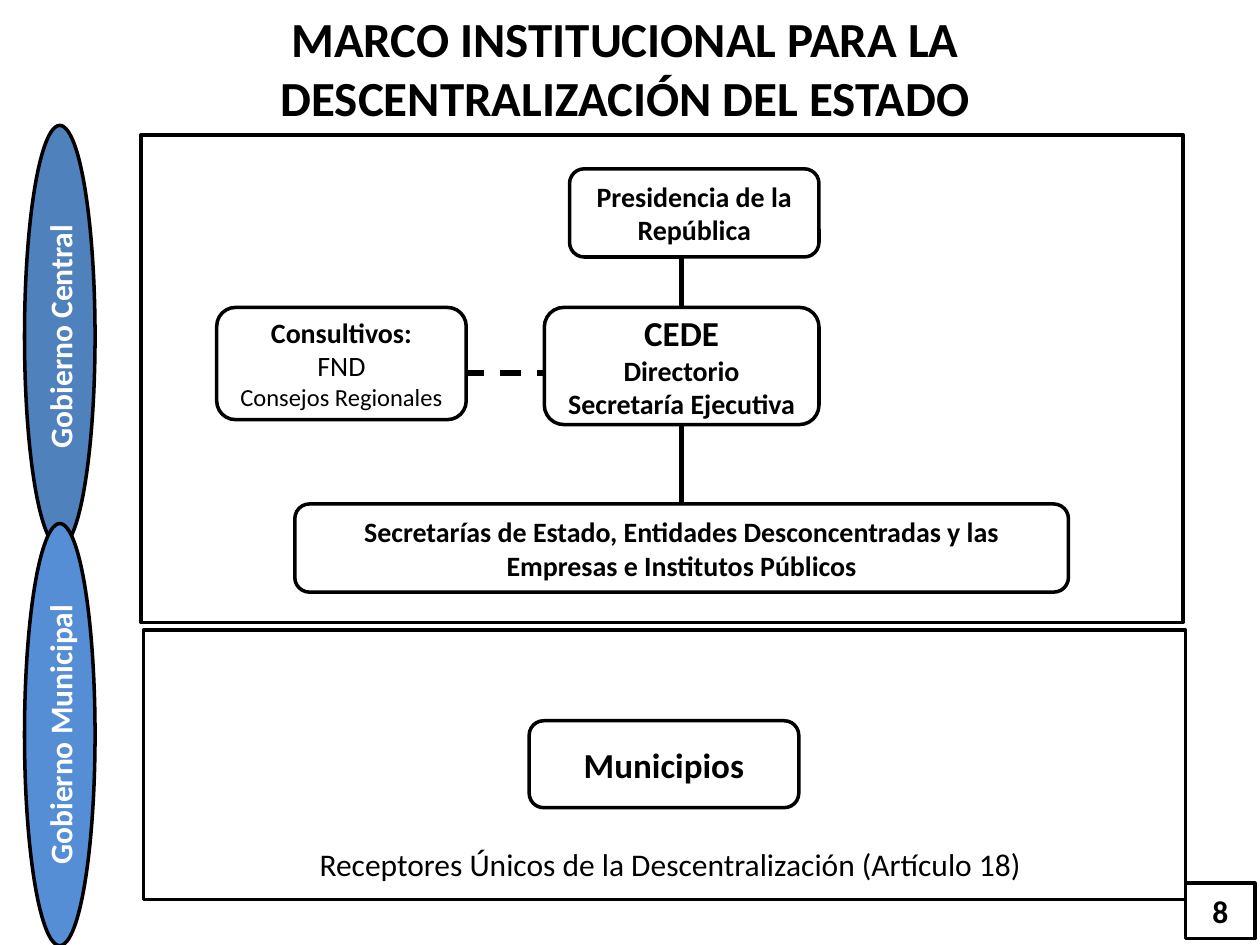
import dataclasses

import pptx
import pptx.dml.color
import pptx.enum.dml
import pptx.enum.shapes
import pptx.enum.text
import pptx.oxml.ns
import pptx.util
from lxml import etree

Inches = pptx.util.Inches
Pt = pptx.util.Pt
SHAPE = pptx.enum.shapes.MSO_SHAPE
ANCHOR = pptx.enum.text.MSO_ANCHOR


@dataclasses.dataclass(frozen=True)
class Theme:
    font: str = "Calibri"
    ink: str = "000000"
    paper: str = "FFFFFF"
    central: str = "4F81BD"
    municipal: str = "558ED5"
    title: int = 28
    heading: int = 20
    label: int = 18
    body: int = 16
    small: int = 14
    outline: int = 2
    link: int = 3


def rgb(value):
    return pptx.dml.color.RGBColor.from_string(value)


def write(para, text, *, size, color, font, bold=True):
    """Add one centred, formatted span of text to a paragraph."""
    para.alignment = pptx.enum.text.PP_ALIGN.CENTER
    span = para.add_run()
    span.text = text
    span.font.name = font
    span.font.size = Pt(size)
    span.font.bold = bold
    span.font.color.rgb = rgb(color)


class SlideBuilder:
    def __init__(self, page, theme):
        self.page = page
        self.theme = theme

    def fill_text(self, frame, lines, color, anchor=ANCHOR.MIDDLE):
        """Each line is (text, size) or (text, size, bold)."""
        frame.word_wrap = True
        frame.vertical_anchor = anchor
        for index, (text, size, *bold) in enumerate(lines):
            para = frame.add_paragraph() if index else frame.paragraphs[0]
            write(para, text, size=size, color=color, font=self.theme.font,
                  bold=bold[0] if bold else True)

    def box(self, place, lines=(), kind=SHAPE.ROUNDED_RECTANGLE, fill=None, color=None):
        box = self.page.shapes.add_shape(kind, *map(Inches, place))
        box.shadow.inherit = False
        box.fill.solid()
        box.fill.fore_color.rgb = rgb(fill or self.theme.paper)
        box.line.color.rgb = rgb(self.theme.ink)
        box.line.width = Pt(self.theme.outline)
        self.fill_text(box.text_frame, lines, color or self.theme.ink)
        return box

    def panel(self, place):
        panel = self.box(place)
        panel.adjustments[0] = 0

    def side_label(self, top, text, fill):
        label = self.box((-1.2, top, 3.35, 0.56), [(text, self.theme.label)],
                         SHAPE.OVAL, fill, self.theme.paper)
        label.rotation = 270

    def text(self, place, lines, anchor=ANCHOR.TOP):
        box = self.page.shapes.add_textbox(*map(Inches, place))
        self.fill_text(box.text_frame, lines, self.theme.ink, anchor)

    def line(self, start, end, dashed=False):
        link = self.page.shapes.add_connector(
            pptx.enum.shapes.MSO_CONNECTOR.STRAIGHT, *map(Inches, (*start, *end)))
        link.line.color.rgb = rgb(self.theme.ink)
        link.line.width = Pt(self.theme.link)
        if dashed:
            link.line.dash_style = pptx.enum.dml.MSO_LINE.DASH
        etree.SubElement(link._element.spPr, pptx.oxml.ns.qn("a:effectLst"))
        return link


def main():
    theme = Theme()
    deck = pptx.Presentation()
    deck.slide_width, deck.slide_height = Inches(10), Inches(7.5)
    slide = SlideBuilder(deck.slides.add_slide(deck.slide_layouts[6]), theme)

    # Title and the two government panels
    slide.text((0.71, 0, 8.5, 1.07),
               [("MARCO INSTITUCIONAL PARA LA DESCENTRALIZACIÓN DEL ESTADO", theme.title)],
               ANCHOR.MIDDLE)
    slide.panel((1.14, 5, 8.27, 2.14))
    slide.panel((1.12, 1.07, 8.27, 3.87))

    # Side labels
    slide.side_label(2.39, "Gobierno Central", theme.central)
    slide.side_label(5.55, "Gobierno Municipal", theme.municipal)

    # Central government: the boxes cover the loose ends of the lines
    axis = 5.41
    slide.line((2.8, 2.96), (4.69, 2.96), dashed=True)
    cede = slide.box((axis - 1.09, 2.44, 2.18, 0.93),
                     [("CEDE", theme.heading), ("Directorio", theme.body),
                      ("Secretaría Ejecutiva", theme.body)])
    slide.box((1.72, 2.44, 1.98, 0.89),
              [("Consultivos:", theme.body), ("FND", theme.body, False),
               ("Consejos Regionales", theme.small, False)])
    ministries = slide.box((axis - 3.07, 4, 6.14, 0.7),
                           [("Secretarías de Estado, Entidades Desconcentradas y las "
                             "Empresas e Institutos Públicos", theme.body)])
    upper = slide.line((axis, 1.96), (axis, 2.44))
    upper.end_connect(cede, 0)
    lower = slide.line((axis, 3.37), (axis, 4))
    lower.begin_connect(cede, 2)
    lower.end_connect(ministries, 0)
    slide.box((4.52, 1.34, 1.98, 0.7), [("Presidencia de la República", theme.body)])

    # Municipal government
    slide.box((4.2, 5.72, 2.14, 0.69), [("Municipios", theme.heading)])
    slide.text((1.46, 6.66, 7.72, 0.4),
               [("Receptores Únicos de la Descentralización (Artículo 18)",
                 theme.label, False)])

    # Page number
    slide.box((9.41, 7.01, 0.55, 0.44), [("8", theme.label)], SHAPE.RECTANGLE)

    deck.save("out.pptx")


if __name__ == "__main__":
    main()
